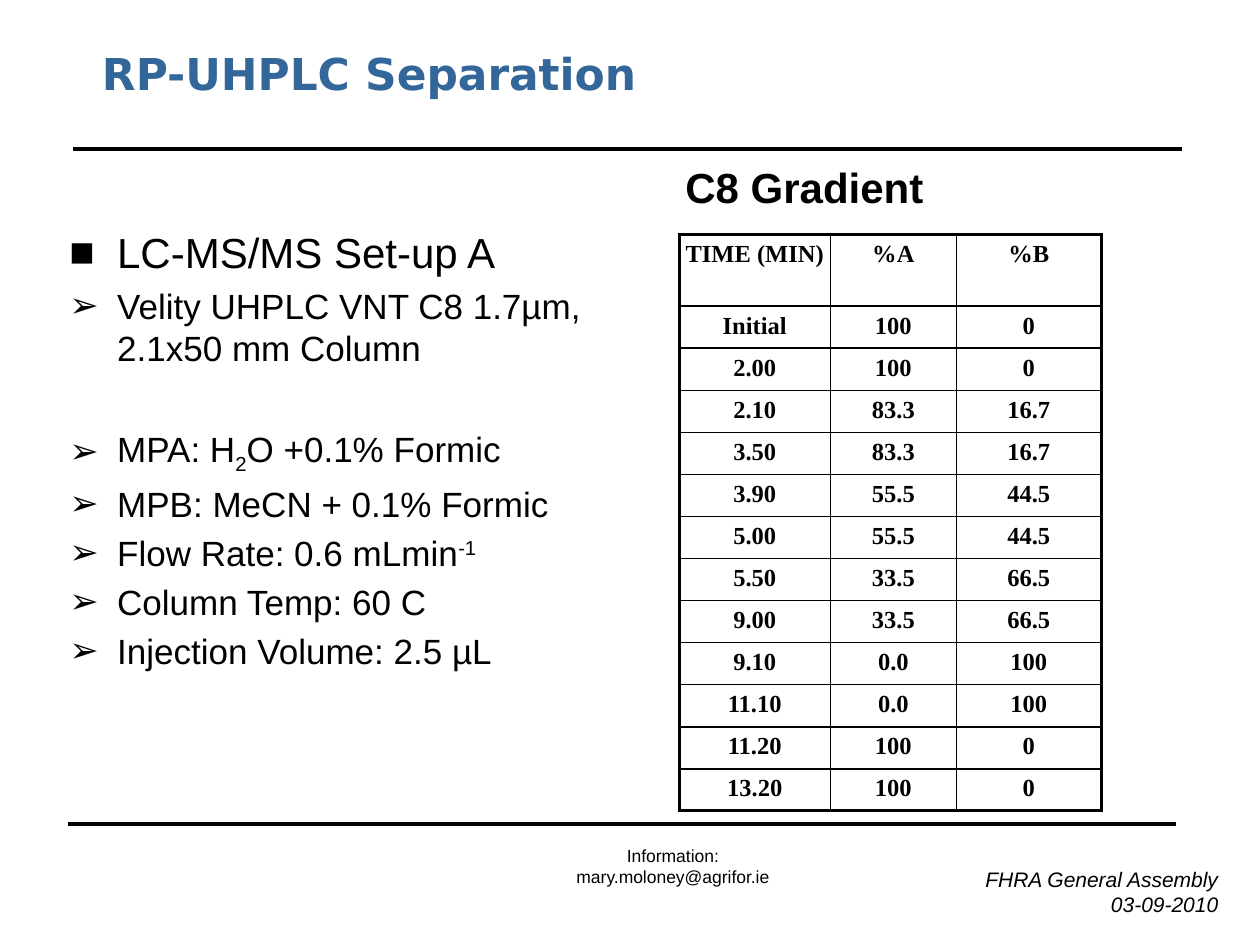
"""Build the RP-UHPLC separation slide."""
from lxml.etree import SubElement, fromstring
from pptx import Presentation
from pptx.dml.color import RGBColor
from pptx.enum.shapes import MSO_CONNECTOR as Link
from pptx.enum.text import MSO_ANCHOR as Anchor, PP_ALIGN as Align
from pptx.oxml.ns import nsdecls, qn
from pptx.util import Inches, Pt

BLACK = RGBColor(0, 0, 0)
BLUE = RGBColor(0x33, 0x66, 0x99)
PAD = Inches(0.05)
INDENT = Inches(0.38)
PADS = dict.fromkeys(
    ("margin_left", "margin_right", "margin_top", "margin_bottom"), PAD)

RULES = [(0.54, 6.54, 9.33), (0.58, 1.18, 9.38)]
TITLE = dict(name="DejaVu Sans", size=Pt(25.1), bold=True)
HEAD = dict(name="Arial", size=Pt(24), bold=True)
EVENT = dict(name="Arial", size=Pt(12), italic=True)
INFO = dict(name="Arial", size=Pt(10))
CELL = dict(name="Times New Roman", size=Pt(14), bold=True)
NOTES = [
    ((5.56, 6.83, 4.16, 0.48), ["FHRA General Assembly", "03-09-2010"],
     EVENT, BLACK, Align.RIGHT, Anchor.TOP),
    ((4.29, 6.66, 2.1, 0.4), ["Information:", "mary.moloney@agrifor.ie"],
     INFO, BLACK, Align.CENTER, Anchor.TOP),
    ((0.76, 0.32, 8.5, 0.51), ["RP-UHPLC Separation"],
     TITLE, BLUE, Align.LEFT, Anchor.MIDDLE),
    ((5.39, 1.23, 2.44, 0.48), ["C8 Gradient"],
     HEAD, BLACK, Align.LEFT, Anchor.TOP),
]
SETUP = [
    ("■", 24, 5, [("LC-MS/MS Set-up A", 0)]),
    ("➢", 20, 4, [("Velity UHPLC VNT C8 1.7µm, 2.1x50 mm Column", 0)]),
    ("➢", 20, 34, [("MPA: H", 0), ("2", -25), ("O +0.1% Formic", 0)]),
    ("➢", 20, 4, [("MPB: MeCN + 0.1% Formic", 0)]),
    ("➢", 20, 4, [("Flow Rate: 0.6 mLmin", 0), ("-1", 30)]),
    ("➢", 20, 4, [("Column Temp: 60 C", 0)]),
    ("➢", 20, 4, [("Injection Volume: 2.5 µL", 0)]),
]
WIDTHS = [1.2, 1, 1.15]
STEPS = [
    ("TIME (MIN)", "%A", "%B"),
    ("Initial", "100", "0"),
    ("2.00", "100", "0"),
    ("2.10", "83.3", "16.7"),
    ("3.50", "83.3", "16.7"),
    ("3.90", "55.5", "44.5"),
    ("5.00", "55.5", "44.5"),
    ("5.50", "33.5", "66.5"),
    ("9.00", "33.5", "66.5"),
    ("9.10", "0.0", "100"),
    ("11.10", "0.0", "100"),
    ("11.20", "100", "0"),
    ("13.20", "100", "0"),
]


def assign(item, values):
    for key, value in values.items():
        setattr(item, key, value)


def write(para, text, style, color=BLACK):
    run = para.add_run()
    run.text = text
    assign(run.font, style)
    run.font.color.rgb = color
    return run


def add_rule(slide, left, top, right):
    rule = slide.shapes.add_connector(
        Link.STRAIGHT, Inches(left), Inches(top), Inches(right), Inches(top))
    rule.line.color.rgb = BLACK
    rule.line.width = Pt(2.25)
    SubElement(rule._element.spPr, qn("a:effectLst"))


def add_box(slide, place, anchor=Anchor.TOP):
    frame = slide.shapes.add_textbox(*map(Inches, place)).text_frame
    assign(frame, dict(PADS, word_wrap=True, vertical_anchor=anchor))
    return frame


def next_para(frame, first):
    return frame.paragraphs[0] if first else frame.add_paragraph()


def add_note(slide, place, lines, style, color, align, anchor):
    frame = add_box(slide, place, anchor)
    for num, text in enumerate(lines):
        para = next_para(frame, num == 0)
        para.alignment = align
        write(para, text, style, color)


def add_setup(slide):
    frame = add_box(slide, (0.5, 1.75, 4.42, 4.95))
    for num, (mark, size, gap, parts) in enumerate(SETUP):
        para = next_para(frame, num == 0)
        para.space_before = Pt(gap)
        props = para._p.get_or_add_pPr()
        props.set("marL", str(INDENT))
        props.set("indent", str(-INDENT))
        tint = SubElement(props, qn("a:buClr"))
        SubElement(tint, qn("a:srgbClr"), val=str(BLACK))
        SubElement(props, qn("a:buFont"), typeface="Arial")
        SubElement(props, qn("a:buChar"), char=mark)
        for text, shift in parts:
            run = write(para, text, dict(name="Arial", size=Pt(size)))
            if shift:
                run.font._rPr.set("baseline", str(shift * 1000))


def add_edges(cell, row, col):
    outer = {"L": col == 0, "R": col == len(WIDTHS) - 1,
             "T": row == 0, "B": row == len(STEPS) - 1}
    props = cell._tc.get_or_add_tcPr()
    for spot, (side, thick) in enumerate(outer.items()):
        width = Pt(2 if thick else 1)
        props.insert(spot, fromstring(
            f'<a:ln{side} {nsdecls("a")} w="{width}"><a:solidFill>'
            f'<a:srgbClr val="{BLACK}"/></a:solidFill></a:ln{side}>'))


def add_steps(slide):
    table = slide.shapes.add_table(
        len(STEPS), len(WIDTHS), Inches(5.39), Inches(1.86),
        Inches(sum(WIDTHS)), Inches(4.57)).table
    assign(table, dict(first_row=False, horz_banding=False))
    for col, width in enumerate(WIDTHS):
        table.columns[col].width = Inches(width)
    for row, values in enumerate(STEPS):
        table.rows[row].height = Inches(4 / 12 if row else 0.57)
        for col, text in enumerate(values):
            cell = table.cell(row, col)
            assign(cell, PADS)
            cell.fill.background()
            para = cell.text_frame.paragraphs[0]
            para.alignment = Align.CENTER
            write(para, text, CELL)
            add_edges(cell, row, col)


def main():
    deck = Presentation()
    assign(deck, dict(slide_width=Inches(10), slide_height=Inches(7.5)))
    slide = deck.slides.add_slide(deck.slide_layouts[6])
    for rule in RULES:
        add_rule(slide, *rule)
    for note in NOTES:
        add_note(slide, *note)
    add_setup(slide)
    add_steps(slide)
    deck.save("out.pptx")


if __name__ == "__main__":
    main()
